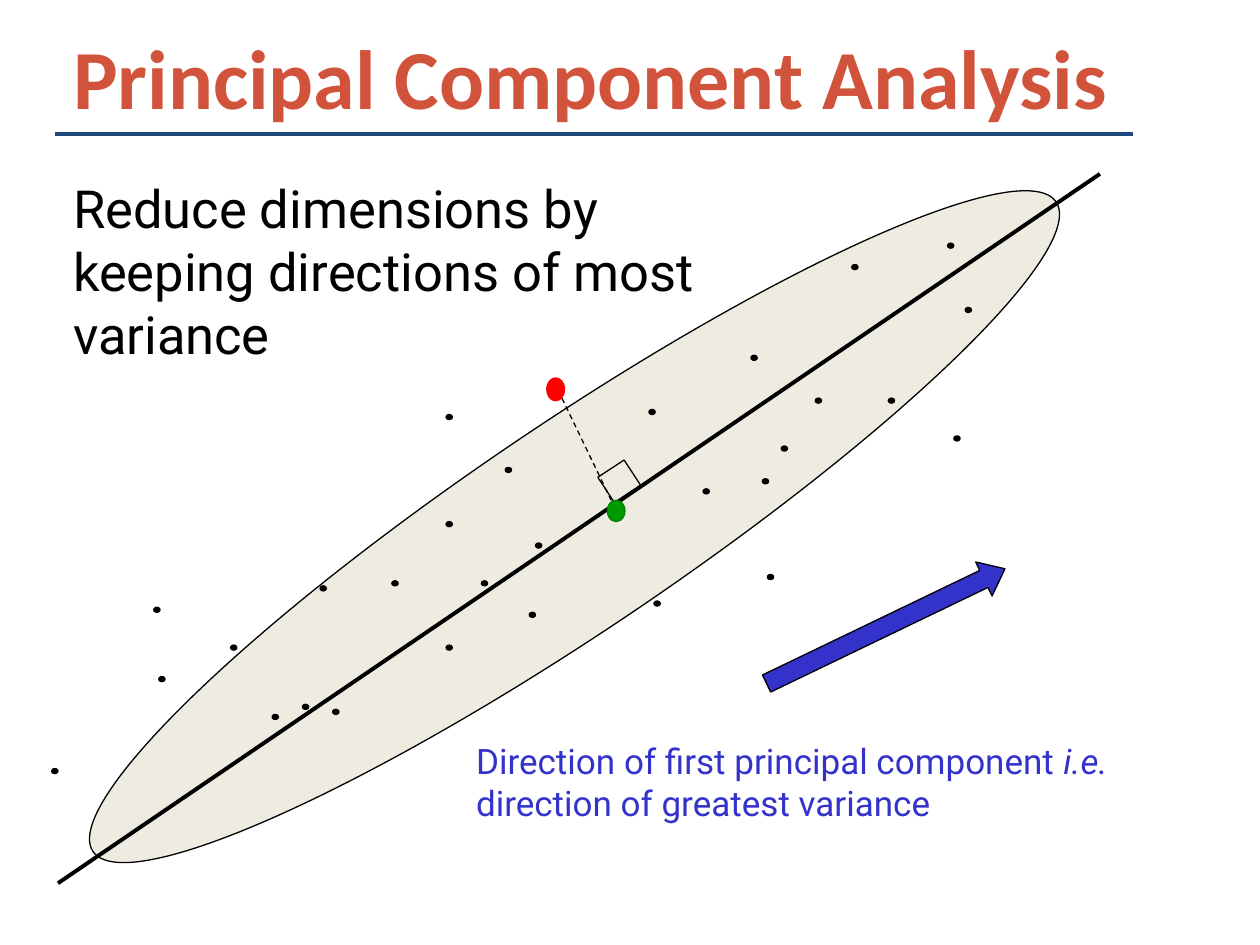
from pptx import Presentation
from pptx.dml.color import RGBColor
from pptx.enum.dml import MSO_LINE
from pptx.enum.shapes import MSO_CONNECTOR, MSO_SHAPE
from pptx.enum.text import MSO_ANCHOR, MSO_AUTO_SIZE, PP_ALIGN
from pptx.oxml.ns import qn
from pptx.util import Inches, Pt
from lxml.etree import SubElement

COLORS = {
    "black": "000000", "title": "D2533B", "rule": "1F497D", "cloud": "EEECE1",
    "red": "FF0000", "green": "009900", "edge": "008000", "blue": "3333CC",
}
# Left and top of each data point
DOTS = [
    (4.25, 4.31), (3.54, 4.14), (3.82, 4.61), (3.11, 4.61), (3.54, 5.12),
    (4.2, 4.86), (5.96, 2.82), (6.76, 2.1), (7.66, 2.44), (6.47, 3.16),
    (7.52, 1.93), (7.05, 3.16), (7.57, 3.46), (6.09, 4.56), (3.54, 3.29),
    (4.01, 3.71), (5.15, 3.25), (6.2, 3.54), (6.05, 3.8), (5.58, 3.88),
    (5.19, 4.77), (1.26, 5.37), (1.22, 4.82), (2.54, 4.65), (0.41, 6.1),
    (1.83, 5.12), (2.16, 5.67), (2.4, 5.59), (2.64, 5.63),
]
# Box, fill, line colour, rotation and preset of each shape
CLOUD = [((-0.05, 3.36, 9.22, 1.64), "cloud", "black", 326, MSO_SHAPE.OVAL)]
POINTS = [((x, y, 0.05, 0.04), "black", "black", 0, MSO_SHAPE.OVAL)
          for x, y in DOTS]
MARKS = [
    ((4.34, 3, 0.14, 0.18), "red", "red", 0, MSO_SHAPE.OVAL),
    ((4.79, 3.7, 0.25, 0.24), None, "black", 326.7, MSO_SHAPE.RECTANGLE),
    ((6.88, 3.92, 0.3, 2.1), "blue", "black", 64.3, MSO_SHAPE.UP_ARROW),
]
FOOT = [((4.82, 3.97, 0.14, 0.17), "green", "edge", 0, MSO_SHAPE.OVAL)]

deck = Presentation()
deck.slide_width, deck.slide_height = Inches(10), Inches(7.5)
slide = deck.slides.add_slide(deck.slide_layouts[1])
shapes = slide.shapes


def write(box, at, pad, runs, size, font, color):
    """Place a text box and fill it with (text, bold, italic) runs."""
    box.left, box.top, box.width, box.height = map(Inches, at)
    frame = box.text_frame
    frame.word_wrap = True
    frame.auto_size = MSO_AUTO_SIZE.NONE
    frame.vertical_anchor = MSO_ANCHOR.TOP
    frame.margin_left = frame.margin_right = Inches(0.1)
    frame.margin_top = frame.margin_bottom = Inches(pad)
    para = frame.paragraphs[0]
    props = para._p.get_or_add_pPr()
    props.set("marL", "0")
    props.set("indent", "0")
    SubElement(props, qn("a:buNone"))
    para.alignment = PP_ALIGN.LEFT
    para.space_before = Pt(0)
    for text, bold, italic in runs:
        run = para.add_run()
        run.text = text
        run.font.name, run.font.size = font, Pt(size)
        run.font.bold, run.font.italic = bold, italic
        run.font.color.rgb = RGBColor.from_string(COLORS[color])


def draw(start, end, color, width, dash=None):
    line = shapes.add_connector(MSO_CONNECTOR.STRAIGHT,
                                *map(Inches, start + end))
    line.line.color.rgb = RGBColor.from_string(COLORS[color])
    line.line.width = Pt(width)
    if dash:
        line.line.dash_style = dash
    SubElement(line._element.spPr, qn("a:effectLst"))


# Title and body
write(shapes.title, (0.48, 0.1, 8.56, 0.96), 0.1,
      [("Principal Component Analysis", True, False)], 48, "Calibri", "title")
write(slide.placeholders[1], (0.48, 1.3, 5.72, 0.5), 0.1,
      [("Reduce dimensions by keeping directions of most variance",
        False, False)], 30, "Roboto", "black")
draw((0.44, 1.06), (8.99, 1.06), "rule", 2.25)

# Data cloud, main axis and projection
for at, fill, edge, turn, kind in CLOUD + POINTS + MARKS + FOOT:
    if kind == MSO_SHAPE.RECTANGLE:
        draw((0.46, 7.01), (8.73, 1.38), "black", 2.25)
        draw((4.46, 3.16), (4.87, 4.01), "black", 0.75, MSO_LINE.DASH)
    shape = shapes.add_shape(kind, *map(Inches, at))
    shape.shadow.inherit = False
    shape.rotation = turn
    if fill:
        shape.fill.solid()
        shape.fill.fore_color.rgb = RGBColor.from_string(COLORS[fill])
    else:
        shape.fill.background()
    shape.line.color.rgb = RGBColor.from_string(COLORS[edge])
    shape.line.width = Pt(0.75)
    if kind == MSO_SHAPE.UP_ARROW:
        shape.adjustments[0], shape.adjustments[1] = 0.5, 0.62

# Caption of the arrow
note = shapes.add_textbox(0, 0, 0, 0)
write(note, (3.68, 5.82, 6.21, 1.12), 0.05,
      [("Direction of first principal component ", False, False),
       ("i.e. ", False, True),
       ("direction of greatest variance", False, False)],
      20, "Roboto", "blue")

deck.save("out.pptx")
